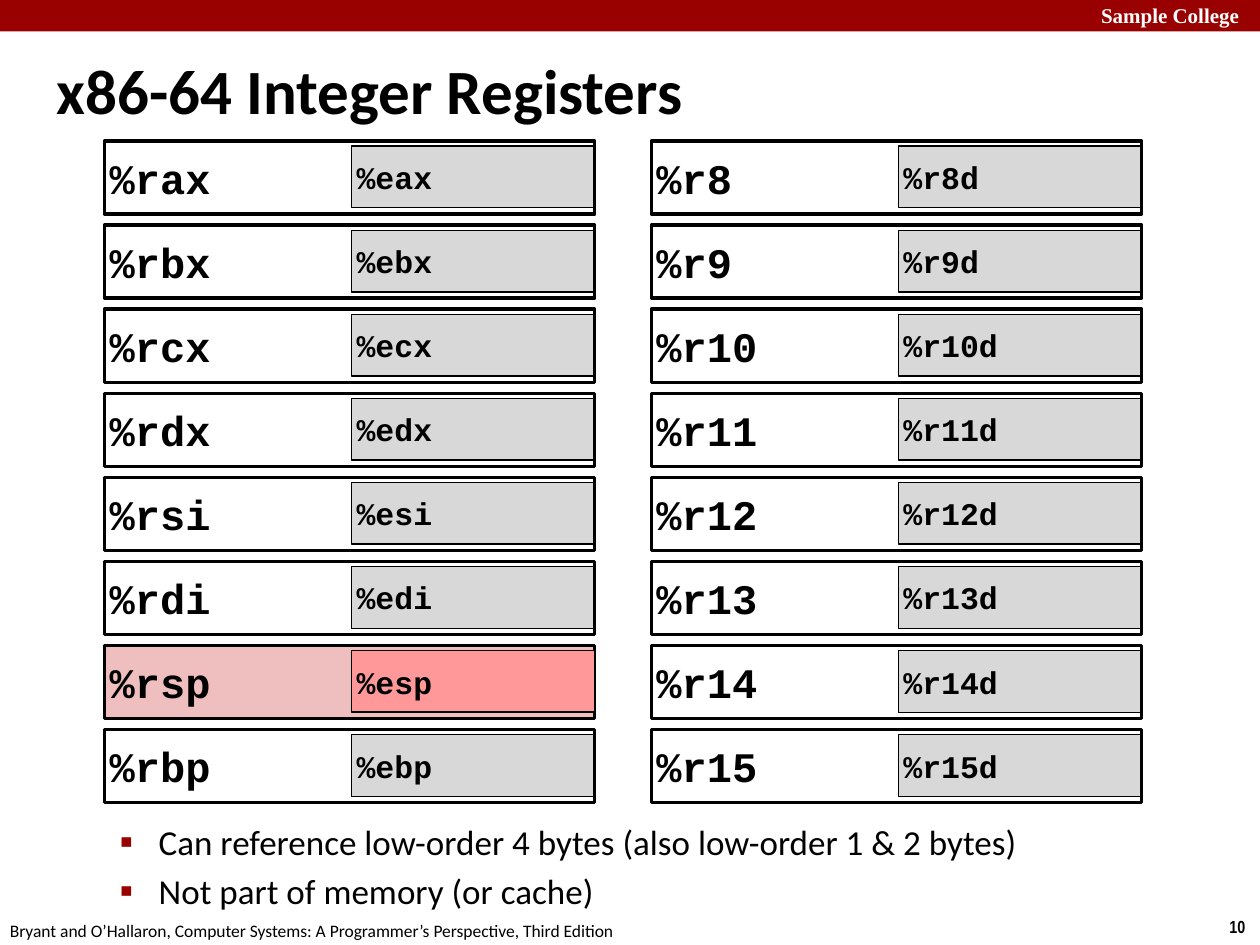
from dataclasses import dataclass

from lxml import etree
from pptx import Presentation
from pptx import util as u
from pptx.dml.color import RGBColor as Rgb
from pptx.enum import shapes, text
from pptx.oxml import ns

Inches = u.Inches


@dataclass(frozen=True)
class Theme:
    black: str = "000000"
    white: str = "FFFFFF"
    red: str = "990000"
    gray: str = "D8D8D8"
    pink: str = "EFBFBF"
    rose: str = "FF9999"
    sans: str = "Calibri"
    mono: str = "Courier New"
    serif: str = "Times New Roman"
    slim: str = "Arial Narrow"
    head: int = 36
    wide: int = 24
    list: int = 20
    low: int = 18
    brand: int = 12
    foot: int = 10


T = Theme()
LEFT = ["ax", "bx", "cx", "dx", "si", "di", "sp", "bp"]
PAIRS = [(f"%r{n}", f"%e{n}") for n in LEFT]
EXTRA = [(f"%r{n}", f"%r{n}d") for n in range(8, 16)]
POINTS = [
    "Can reference low-order 4 bytes (also low-order 1 & 2 bytes)",
    "Not part of memory (or cache)",
]


def style(frame, face, size, color=T.black, bold=False):
    for para in frame.paragraphs:
        para.alignment = text.PP_ALIGN.LEFT
        for run in para.runs:
            font = run.font
            font.name, font.size, font.bold = face, u.Pt(size), bold
            font.color.rgb = Rgb.from_string(color)


def place(shape, box):
    shape.left, shape.top, shape.width, shape.height = box


def indent(para, margin, first):
    props = para._p.get_or_add_pPr()
    props.set("marL", str(margin))
    props.set("indent", str(first))
    return props


def bullet(para):
    props = indent(para, Inches(0.81), Inches(-0.31))
    color = etree.SubElement(props, ns.qn("a:buClr"))
    etree.SubElement(color, ns.qn("a:srgbClr"), val=T.red)
    etree.SubElement(props, ns.qn("a:buSzPct"), val="110000")
    etree.SubElement(props, ns.qn("a:buFont"), typeface="Arial")
    etree.SubElement(props, ns.qn("a:buChar"), char="▪")


def rect(slide, box, fill=None, line=None):
    shape = slide.shapes.add_shape(shapes.MSO_SHAPE.RECTANGLE, *box)
    shape.shadow.inherit = False
    if fill:
        shape.fill.solid()
        shape.fill.fore_color.rgb = Rgb.from_string(fill)
    else:
        shape.fill.background()
    if line:
        shape.line.color.rgb = Rgb.from_string(T.black)
        shape.line.width = u.Pt(line)
    else:
        shape.line.fill.background()
    return shape


def cell(slide, box, name, size, fill, line):
    frame = rect(slide, box, fill, line).text_frame
    frame.margin_left = frame.margin_right = Inches(0.04)
    frame.margin_top = frame.margin_bottom = Inches(0.04)
    frame.vertical_anchor = text.MSO_ANCHOR.MIDDLE
    frame.text = name
    style(frame, T.mono, size, bold=True)


def label(slide, box, words, face, size, color=T.black, bold=False):
    frame = slide.shapes.add_textbox(*box).text_frame
    frame.word_wrap = True
    frame.text = words
    style(frame, face, size, color, bold)


def banner(slide, box):
    left, top, width, height = box
    rect(slide, box, T.red)
    spot = (left + width - Inches(1.36), top - Inches(0.03), Inches(1.43), Inches(0.3))
    label(slide, spot, "Sample College", T.serif, T.brand, T.white, True)


def title(slide, box):
    shape = slide.shapes.title
    place(shape, box)
    frame = shape.text_frame
    frame.text = "x86-64 Integer Registers"
    frame.auto_size = text.MSO_AUTO_SIZE.NONE
    frame.vertical_anchor = text.MSO_ANCHOR.MIDDLE
    indent(frame.paragraphs[0], Inches(0.13), Inches(-0.13))
    style(frame, T.sans, T.head, bold=True)


def notes(slide, box):
    shape = slide.placeholders[1]
    place(shape, box)
    frame = shape.text_frame
    frame.text = "\n".join(POINTS)
    frame.auto_size = text.MSO_AUTO_SIZE.NONE
    for para in frame.paragraphs:
        para.level = 1
        para.space_before = u.Pt(4)
        bullet(para)
    style(frame, T.sans, T.list)


def register(slide, box, names, hot):
    left, top, width, height = box
    half = (left + Inches(1.96), top + Inches(0.04), Inches(1.93), Inches(0.49))
    wide = (box, names[0], T.wide, T.pink if hot else None, 2)
    low = (half, names[1], T.low, T.rose if hot else T.gray, 1 if hot else 0.75)
    for part in (wide, low) if hot else (low, wide):
        cell(slide, *part)


def column(slide, box, pairs):
    left, top, width, height = box
    tall = Inches(0.58)
    step = (height - tall) // (len(pairs) - 1)
    for row, names in enumerate(pairs):
        spot = (left, top + row * step, width, tall)
        register(slide, spot, names, names[0] == "%rsp")


def footer(slide, box):
    left, top, width, height = box
    credit = "Bryant and O’Hallaron, Computer Systems: A Programmer’s Perspective, Third Edition"
    label(slide, (left - Inches(0.02), top, Inches(5.2), height), credit, T.sans, T.foot)
    spot = (left + width - Inches(0.34), top - Inches(0.03), Inches(0.34), height)
    label(slide, spot, "10", T.slim, T.foot, bold=True)


def main():
    deck = Presentation()
    deck.slide_width, deck.slide_height = Inches(10), Inches(7.5)
    slide = deck.slides.add_slide(deck.slide_layouts[1])
    banner(slide, (0, 0, deck.slide_width, Inches(0.25)))
    title(slide, (Inches(0.35), Inches(0.29), Inches(8.3), Inches(0.83)))
    for left, pairs in ((0.83, PAIRS), (5.17, EXTRA)):
        column(slide, (Inches(left), Inches(1.12), Inches(3.89), Inches(5.25)), pairs)
    notes(slide, (Inches(0.35), Inches(6.46), Inches(8.02), Inches(0.92)))
    footer(slide, (0, Inches(7.25), deck.slide_width, Inches(0.27)))
    deck.save("out.pptx")


if __name__ == "__main__":
    main()
